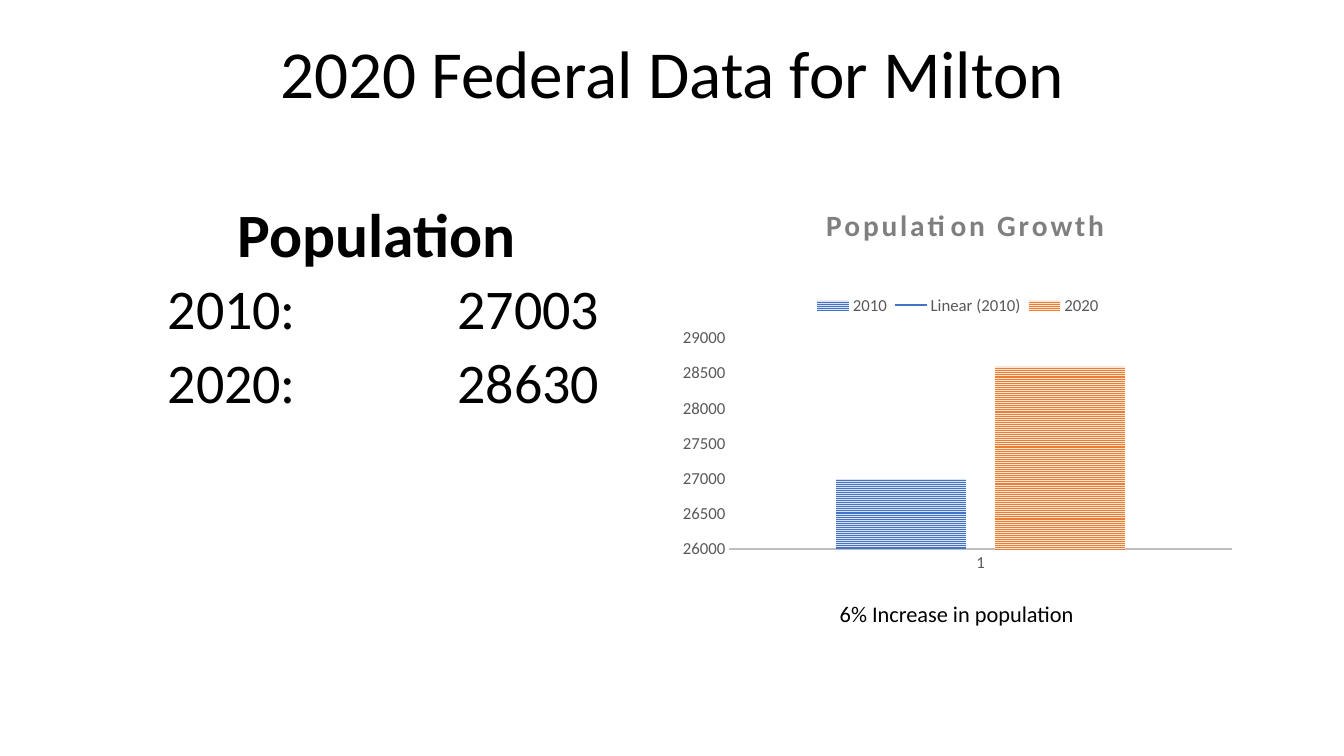
from dataclasses import dataclass

from lxml import etree
from pptx import Presentation
from pptx import util as u
from pptx.chart import data as chart_data
from pptx.dml.color import RGBColor
from pptx.enum import chart as chart_enum, dml, text
from pptx.oxml import ns, parse_xml


@dataclass(frozen=True)
class Theme:
    font: str = "Calibri"
    ink: str = "000000"
    label: str = "595959"
    chart_title: str = "7F7F7F"
    axis: str = "BFBFBF"
    blue: str = "4472C4"
    pale_blue: str = "DAE3F3"
    orange: str = "ED7D31"
    pale_orange: str = "FBE5D6"
    title_size: int = 48
    heading_size: int = 44
    body_size: int = 40
    caption_size: int = 16
    chart_title_size: int = 21
    label_size: int = 12


theme = Theme()


def style_font(font, size, color, bold=False):
    font.name = theme.font
    font.size = u.Pt(size)
    font.bold = bold
    font.color.rgb = RGBColor.from_string(color)


def add_text(slide, box, lines, size, anchor, bold=False, spacing=0.9, tabs=()):
    shape = slide.shapes.add_textbox(*[u.Cm(length) for length in box])
    frame = shape.text_frame
    frame.word_wrap = True
    frame.vertical_anchor = anchor
    for index, line in enumerate(lines):
        paragraph = frame.paragraphs[0] if index == 0 else frame.add_paragraph()
        paragraph.alignment = text.PP_ALIGN.CENTER
        paragraph.line_spacing = spacing
        if index:
            paragraph.space_before = u.Pt(10)
        if tabs:
            tab_list = etree.SubElement(paragraph._p.get_or_add_pPr(), ns.qn("a:tabLst"))
            for position in tabs:
                etree.SubElement(tab_list, ns.qn("a:tab"), pos=str(u.Cm(position)), algn="l")
        run = paragraph.add_run()
        run.text = line
        style_font(run.font, size, theme.ink, bold)
    return shape


presentation = Presentation()
presentation.slide_width = u.Cm(33.87)
presentation.slide_height = u.Cm(19.05)
slide = presentation.slides.add_slide(presentation.slide_layouts[6])

# Title, heading and population figures
top, bottom = text.MSO_ANCHOR.TOP, text.MSO_ANCHOR.BOTTOM
title = add_text(slide, (2.34, 1.02, 29.21, 3.68), ["2020 Federal Data for Milton"],
                 theme.title_size, top)
title.text_frame.margin_top = 0
add_text(slide, (2.34, 4.67, 14.33, 2.29), ["Population"], theme.heading_size, bottom, bold=True)
add_text(slide, (2.34, 6.96, 14.33, 10.24), [" 2010:\t\t27003", " 2020:\t\t28630"],
         theme.body_size, top, tabs=(5.08, 7.62))

# Chart data and frame
population = chart_data.CategoryChartData()
population.categories = ["1"]
population.add_series("2010", [27000])
population.add_series("2020", [28600])
chart = slide.shapes.add_chart(
    chart_enum.XL_CHART_TYPE.COLUMN_CLUSTERED,
    u.Cm(16.94), u.Cm(4.42), u.Cm(14.4), u.Cm(10.24), population).chart
style_font(chart.font, theme.label_size, theme.label)

# Chart title and legend
chart.has_title = True
title_run = chart.chart_title.text_frame.paragraphs[0].add_run()
title_run.text = "Population Growth"
style_font(title_run.font, theme.chart_title_size, theme.chart_title, bold=True)
title_run.font._element.set("spc", "200")
chart.has_legend = True
chart.legend.position = chart_enum.XL_LEGEND_POSITION.TOP
chart.legend.include_in_layout = False
style_font(chart.legend.font, theme.label_size, theme.label)

# Axes
for axis in (chart.category_axis, chart.value_axis):
    axis.has_major_gridlines = False
    axis.major_tick_mark = chart_enum.XL_TICK_MARK.NONE
    axis.minor_tick_mark = chart_enum.XL_TICK_MARK.NONE
    style_font(axis.tick_labels.font, theme.label_size, theme.label)
chart.category_axis.format.line.color.rgb = RGBColor.from_string(theme.axis)
chart.category_axis.format.line.width = u.Pt(1.5)
chart.value_axis.format.line.fill.background()
chart.value_axis.minimum_scale = 26000
chart.value_axis.maximum_scale = 29000
chart.value_axis.major_unit = 500

# Striped columns
plot = chart.plots[0]
plot.gap_width = 164
plot.overlap = -22
plot.vary_by_categories = False
stripes = ((theme.blue, theme.pale_blue), (theme.orange, theme.pale_orange))
for series, (dark, pale) in zip(plot.series, stripes):
    series.invert_if_negative = False
    fill = series.format.fill
    fill.patterned()
    fill.pattern = dml.MSO_PATTERN.NARROW_HORIZONTAL
    fill.fore_color.rgb = RGBColor.from_string(dark)
    fill.back_color.rgb = RGBColor.from_string(pale)

# Linear trend line for 2010
trend = parse_xml(
    f'<c:trendline {ns.nsdecls("c", "a")}><c:spPr><a:ln w="{u.Pt(1.5)}"><a:solidFill>'
    f'<a:srgbClr val="{theme.blue}"/></a:solidFill></a:ln></c:spPr>'
    '<c:trendlineType val="linear"/><c:dispRSqr val="0"/><c:dispEq val="0"/></c:trendline>')
plot.series[0]._element.find(ns.qn("c:cat")).addprevious(trend)

# Places of title, legend and plot area as shares of the chart
chart_space = chart._chartSpace
places = {
    "c:title": {"x": 0.26, "y": 0.06},
    "c:legend": {"x": 0.24, "y": 0.29, "w": 0.52, "h": 0.06},
    "c:plotArea": {"layoutTarget": "inner", "x": 0.1, "y": 0.4, "w": 0.88, "h": 0.52},
}
for part_name, place in places.items():
    part = chart_space.find(".//" + ns.qn(part_name))
    layout = part.find(ns.qn("c:layout"))
    if layout is None:
        layout = etree.Element(ns.qn("c:layout"))
        leading = {"c:title": "c:tx", "c:legend": "c:legendPos"}.get(part_name)
        if leading:
            part.find(ns.qn(leading)).addnext(layout)
        else:
            part.insert(0, layout)
    manual = etree.SubElement(layout, ns.qn("c:manualLayout"))
    modes = {"xMode": "edge", "yMode": "edge"}
    target = {key: value for key, value in place.items() if key == "layoutTarget"}
    for key, value in {**target, **modes, **place}.items():
        if manual.find(ns.qn("c:" + key)) is None:
            etree.SubElement(manual, ns.qn("c:" + key), val=str(value))

# Caption under the chart
caption = add_text(slide, (15.65, 14.99, 16.92, 0.94), ["6% Increase in population"],
                   theme.caption_size, top, spacing=1.0)
caption.text_frame.auto_size = text.MSO_AUTO_SIZE.SHAPE_TO_FIT_TEXT

presentation.save("out.pptx")
